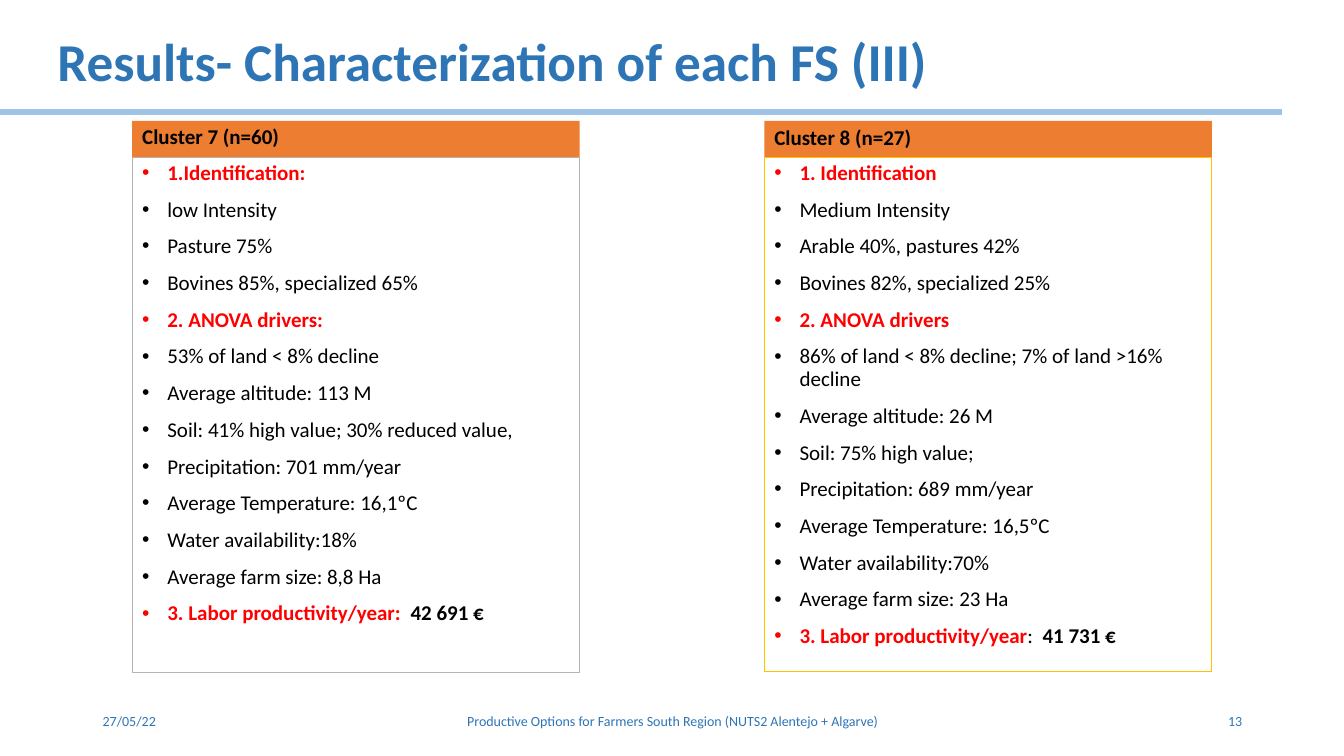
from dataclasses import dataclass

from lxml import etree
from pptx import Presentation
from pptx import util as u
from pptx.dml.color import RGBColor
from pptx.enum import shapes, text
from pptx.oxml import ns
from pptx.shapes.base import BaseShape
from pptx.slide import Slide
from pptx.text.text import TextFrame

FONT = "Calibri"
BLACK = RGBColor(0x00, 0x00, 0x00)
RED = RGBColor(0xFF, 0x00, 0x00)
BLUE = RGBColor(0x2E, 0x75, 0xB6)
LIGHT_BLUE = RGBColor(0x9D, 0xC3, 0xE6)
ORANGE = RGBColor(0xED, 0x7D, 0x31)
GOLD = RGBColor(0xFF, 0xC0, 0x00)
GREY = RGBColor(0xB4, 0xB4, 0xB4)

COMPARISON_LAYOUT = 4
CARD_TOP, CARD_WIDTH, HEADER_HEIGHT = 1.2, 4.44, 0.36
FOOTER_TOP, FOOTER_HEIGHT = 6.95, 0.4


@dataclass(frozen=True)
class Span:
    text: str
    color: RGBColor = BLACK
    bold: bool = False


@dataclass(frozen=True)
class Cluster:
    title: str
    left: float
    body_height: float
    outline: RGBColor
    header_anchor: text.MSO_ANCHOR
    identification: str
    traits: tuple[str, ...]
    anova: str
    drivers: tuple[str, ...]
    productivity: tuple[Span, ...]


@dataclass(frozen=True)
class Footer:
    text: str
    left: float
    width: float
    align: text.PP_ALIGN


CLUSTERS = (
    Cluster(
        "Cluster 7 (n=60)", 1.31, 5.11, GREY, text.MSO_ANCHOR.TOP,
        "1.Identification:",
        ("low Intensity", "Pasture 75%", "Bovines 85%, specialized 65%"),
        "2. ANOVA drivers:",
        (
            "53% of land < 8% decline",
            "Average altitude: 113 M",
            "Soil: 41% high value; 30% reduced value,",
            "Precipitation: 701 mm/year",
            "Average Temperature: 16,1ºC",
            "Water availability:18%",
            "Average farm size: 8,8 Ha",
        ),
        (
            Span("3. Labor productivity/year:  ", RED, True),
            Span("42 691 €", bold=True),
        ),
    ),
    Cluster(
        "Cluster 8 (n=27)", 7.58, 5.1, GOLD, text.MSO_ANCHOR.MIDDLE,
        "1. Identification",
        ("Medium Intensity", "Arable 40%, pastures 42%", "Bovines 82%, specialized 25%"),
        "2. ANOVA drivers",
        (
            "86% of land < 8% decline; 7% of land >16% decline",
            "Average altitude: 26 M",
            "Soil: 75% high value;",
            "Precipitation: 689 mm/year",
            "Average Temperature: 16,5ºC",
            "Water availability:70%",
            "Average farm size: 23 Ha",
        ),
        (
            Span("3. Labor productivity/year", RED, True),
            Span(":  "),
            Span("41 731 €", bold=True),
        ),
    ),
)

FOOTERS = (
    Footer("27/05/22", 0.92, 3, text.PP_ALIGN.LEFT),
    Footer(
        "Productive Options for Farmers South Region (NUTS2 Alentejo + Algarve)",
        4.42, 4.5, text.PP_ALIGN.CENTER,
    ),
    Footer("13", 9.42, 3, text.PP_ALIGN.RIGHT),
)


def place(box: BaseShape, left: float, top: float, width: float, height: float) -> None:
    box.left, box.top = u.Inches(left), u.Inches(top)
    box.width, box.height = u.Inches(width), u.Inches(height)


def write(
    frame: TextFrame,
    rows: list[tuple[Span, ...]],
    *,
    size: float,
    anchor: text.MSO_ANCHOR = text.MSO_ANCHOR.TOP,
    align: text.PP_ALIGN = text.PP_ALIGN.LEFT,
    line_spacing: float = 1.0,
    before: float = 0,
    after: float = 0,
    bullet: bool = False,
) -> None:
    frame.word_wrap = True
    frame.auto_size = text.MSO_AUTO_SIZE.NONE
    frame.vertical_anchor = anchor
    for index, row in enumerate(rows):
        para = frame.add_paragraph() if index else frame.paragraphs[0]
        para.alignment = align
        para.line_spacing = line_spacing
        para.space_before, para.space_after = u.Pt(before), u.Pt(after)
        if bullet:
            properties = para._p.get_or_add_pPr()
            properties.set("marL", str(u.Inches(0.25)))
            properties.set("indent", str(u.Inches(-0.25)))
            etree.SubElement(properties, ns.qn("a:buFont"), typeface="Arial")
            etree.SubElement(properties, ns.qn("a:buChar"), char="•")
        for span in row:
            run = para.add_run()
            run.text = span.text
            run.font.name, run.font.size = FONT, u.Pt(size)
            run.font.bold = span.bold
            run.font.color.rgb = span.color


def draw_heading(page: Slide) -> None:
    title = page.shapes.title
    place(title, 0.47, 0.17, 12.8, 0.77)
    write(
        title.text_frame,
        [(Span("Results- Characterization of each FS (III)", BLUE, True),)],
        size=38, line_spacing=1.1, after=8,
    )
    rule = page.shapes.add_connector(
        shapes.MSO_CONNECTOR.STRAIGHT,
        u.Inches(0), u.Inches(1.11), u.Inches(12.72), u.Inches(1.11),
    )
    rule.line.color.rgb, rule.line.width = LIGHT_BLUE, u.Pt(4)
    etree.SubElement(rule._element.spPr, ns.qn("a:effectLst"))


def draw_cluster(header: BaseShape, body: BaseShape, cluster: Cluster) -> None:
    place(header, cluster.left, CARD_TOP, CARD_WIDTH, HEADER_HEIGHT)
    header.fill.solid()
    header.fill.fore_color.rgb = ORANGE
    write(
        header.text_frame, [(Span(cluster.title, bold=True),)],
        size=15, anchor=cluster.header_anchor, line_spacing=0.9,
    )
    place(body, cluster.left, CARD_TOP + HEADER_HEIGHT, CARD_WIDTH, cluster.body_height)
    body.line.color.rgb, body.line.width = cluster.outline, u.Pt(0.75)
    rows = [
        (Span(cluster.identification, RED, True),),
        *((Span(trait),) for trait in cluster.traits),
        (Span(cluster.anova, RED, True),),
        *((Span(driver),) for driver in cluster.drivers),
        cluster.productivity,
    ]
    write(body.text_frame, rows, size=15, line_spacing=0.9, before=10, bullet=True)


def draw_footer(page: Slide, footer: Footer) -> None:
    box = page.shapes.add_textbox(0, 0, 0, 0)
    place(box, footer.left, FOOTER_TOP, footer.width, FOOTER_HEIGHT)
    write(
        box.text_frame, [(Span(footer.text, BLUE),)],
        size=10, anchor=text.MSO_ANCHOR.MIDDLE, align=footer.align,
    )


def main() -> None:
    deck = Presentation()
    deck.slide_width, deck.slide_height = u.Inches(13.33), u.Inches(7.5)
    page = deck.slides.add_slide(deck.slide_layouts[COMPARISON_LAYOUT])
    draw_heading(page)
    for index, cluster in enumerate(CLUSTERS):
        first = 2 * index + 1
        draw_cluster(page.placeholders[first], page.placeholders[first + 1], cluster)
    for footer in FOOTERS:
        draw_footer(page, footer)
    deck.save("out.pptx")


if __name__ == "__main__":
    main()
